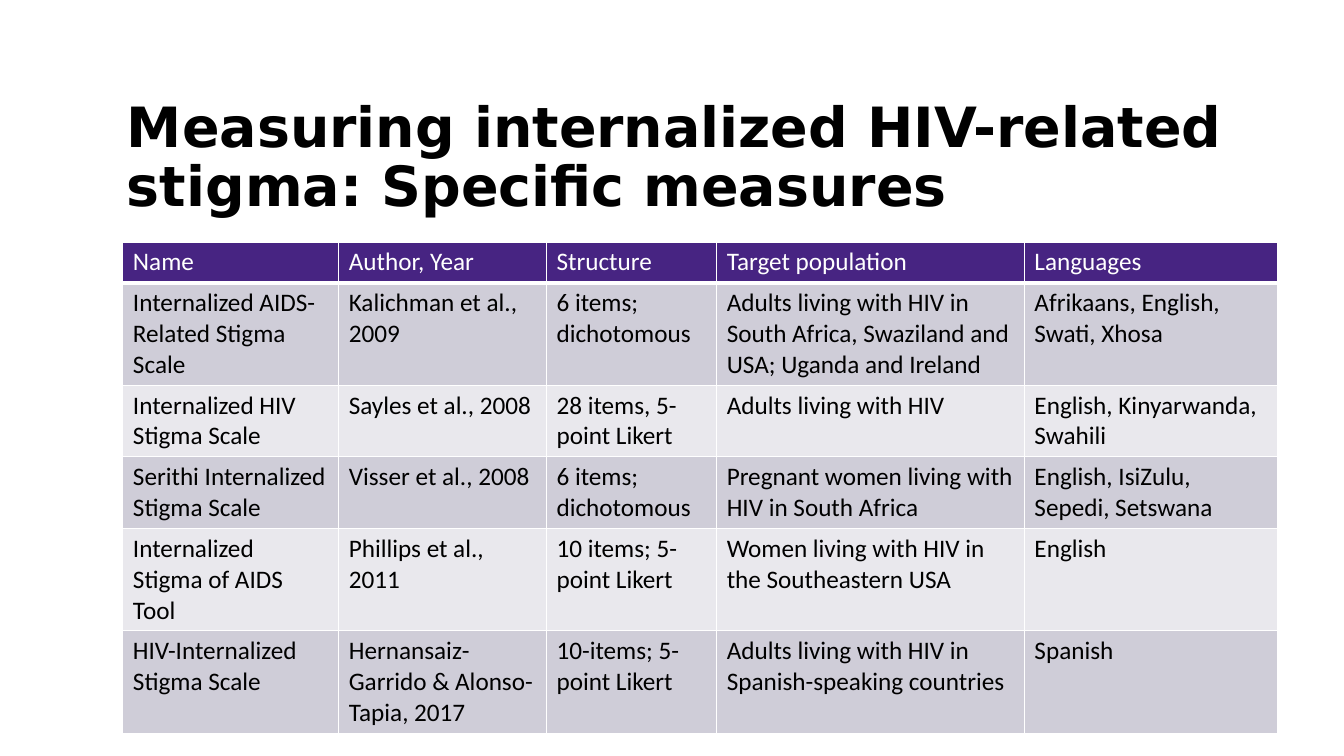
"""Build a slide with a table of internalized HIV stigma measures."""
from dataclasses import dataclass

from lxml import etree
from pptx import Presentation
from pptx.dml.color import RGBColor
from pptx.enum.text import MSO_ANCHOR, MSO_AUTO_SIZE, PP_ALIGN
from pptx.oxml.ns import qn
from pptx.slide import Slide
from pptx.table import _Cell
from pptx.text.text import _Paragraph
from pptx.util import Pt

BOTTOM = MSO_ANCHOR.BOTTOM
NO_FIT = MSO_AUTO_SIZE.NONE
LEFT = PP_ALIGN.LEFT


@dataclass(frozen=True)
class Theme:
    head: str = "472482"
    bands: tuple[str, str] = ("CFCDD8", "E9E8ED")
    light: str = "FFFFFF"
    dark: str = "000000"
    title_font: str = "DejaVu Sans"
    font: str = "Calibri"
    title_size: float = 39.6
    size: float = 18


@dataclass(frozen=True)
class Measure:
    name: str
    author: str
    form: str
    people: str
    tongues: str

    def texts(self) -> tuple[str, ...]:
        return self.name, self.author, self.form, self.people, self.tongues


THEME = Theme()
TITLE = "Measuring internalized HIV-related stigma: Specific measures"
WIDTHS = (154.2, 148.4, 121.6, 219.8, 180.6)
ROW_HEIGHT = 29.2
EDGES = {"a:lnL": 1, "a:lnR": 1, "a:lnT": 1, "a:lnB": 3}
HEAD = Measure("Name", "Author, Year", "Structure", "Target population", "Languages")
MEASURES = (
    Measure("Internalized AIDS-Related Stigma Scale", "Kalichman et al., 2009",
            "6 items; dichotomous",
            "Adults living with HIV in South Africa, Swaziland and USA; Uganda and Ireland",
            "Afrikaans, English, Swati, Xhosa"),
    Measure("Internalized HIV Stigma Scale", "Sayles et al., 2008",
            "28 items, 5-point Likert", "Adults living with HIV",
            "English, Kinyarwanda, Swahili"),
    Measure("Serithi Internalized Stigma Scale", "Visser et al., 2008",
            "6 items; dichotomous", "Pregnant women living with HIV in South Africa",
            "English, IsiZulu, Sepedi, Setswana"),
    Measure("Internalized Stigma of AIDS Tool", "Phillips et al., 2011",
            "10 items; 5-point Likert", "Women living with HIV in the Southeastern USA",
            "English"),
    Measure("HIV-Internalized Stigma Scale", "Hernansaiz-Garrido & Alonso-Tapia, 2017",
            "10-items; 5-point Likert",
            "Adults living with HIV in Spanish-speaking countries", "Spanish"),
)


def add_run(para: _Paragraph, text: str, font: str, size: float, color: str, bold: bool) -> None:
    run = para.add_run()
    run.text = text
    run.font.name = font
    run.font.size = Pt(size)
    run.font.bold = bold
    run.font.color.rgb = RGBColor.from_string(color)


def add_title(slide: Slide) -> None:
    title = slide.shapes.title
    title.left, title.top, title.width, title.height = Pt(83.5), Pt(64), Pt(848), Pt(96)
    frame = title.text_frame
    frame.word_wrap = True
    frame.auto_size = NO_FIT
    frame.vertical_anchor = BOTTOM
    para = frame.paragraphs[0]
    para.alignment = LEFT
    para.line_spacing = 0.9
    add_run(para, TITLE, THEME.title_font, THEME.title_size, THEME.dark, True)


def set_edges(cell: _Cell) -> None:
    props = cell._tc.get_or_add_tcPr()
    for spot, (tag, width) in enumerate(EDGES.items()):
        line = etree.Element(qn(tag), w=str(Pt(width)))
        fill = etree.SubElement(line, qn("a:solidFill"))
        etree.SubElement(fill, qn("a:srgbClr"), val=THEME.light)
        props.insert(spot, line)


def fill_cell(cell: _Cell, text: str, fill: str, color: str) -> None:
    cell.fill.solid()
    cell.fill.fore_color.rgb = RGBColor.from_string(fill)
    add_run(cell.text_frame.paragraphs[0], text, THEME.font, THEME.size, color, False)


def add_grid(slide: Slide) -> None:
    rows = (HEAD, *MEASURES)
    table = slide.shapes.add_table(
        len(rows), len(WIDTHS), Pt(87.8), Pt(172.8),
        Pt(sum(WIDTHS)), Pt(ROW_HEIGHT * len(rows))).table
    for column, width in zip(table.columns, WIDTHS):
        column.width = Pt(width)
    for index, measure in enumerate(rows):
        table.rows[index].height = Pt(ROW_HEIGHT)
        top = index == 0
        fill = THEME.head if top else THEME.bands[(index - 1) % 2]
        color = THEME.light if top else THEME.dark
        for cell, text in zip(table.rows[index].cells, measure.texts()):
            fill_cell(cell, text, fill, color)
            if top:
                set_edges(cell)


def main() -> None:
    deck = Presentation()
    deck.slide_width, deck.slide_height = Pt(960), Pt(540)
    slide = deck.slides.add_slide(deck.slide_layouts[5])
    add_title(slide)
    add_grid(slide)
    deck.save("out.pptx")


if __name__ == "__main__":
    main()
